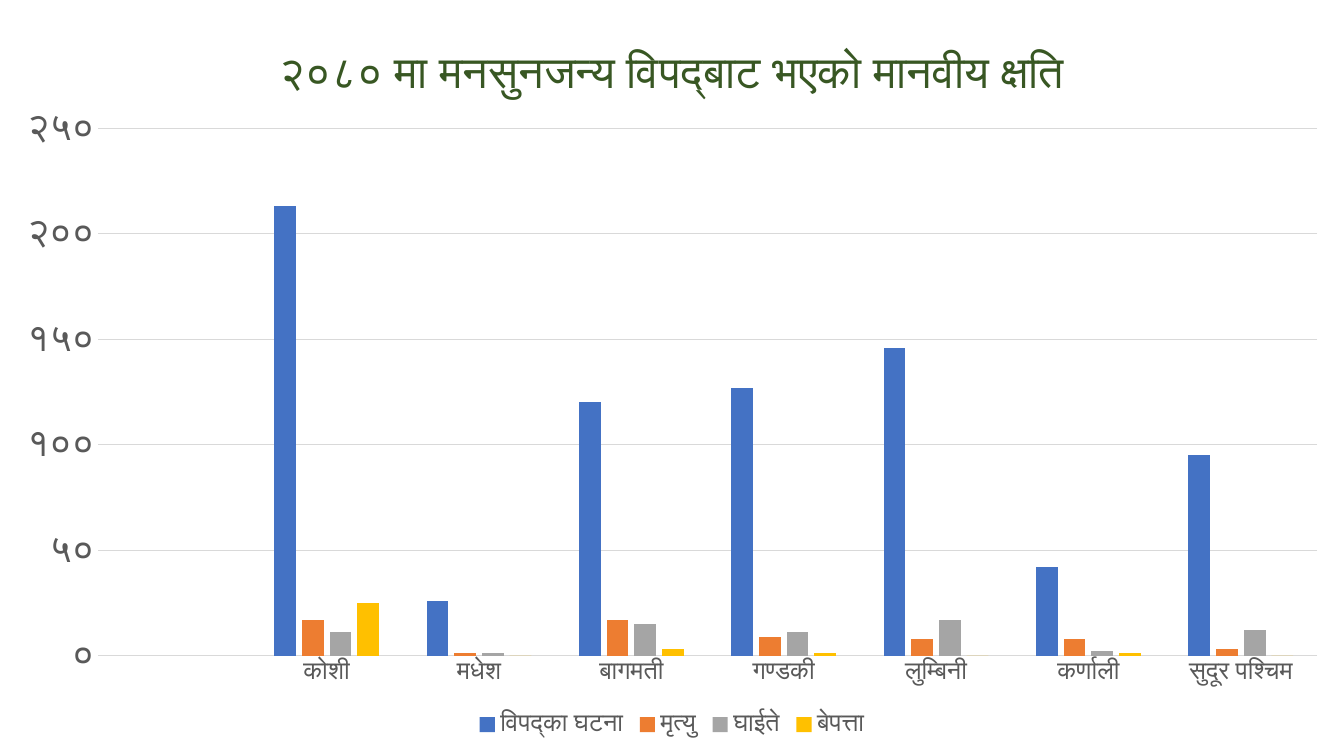
from pptx import Presentation
from pptx import util as u
from pptx.chart.data import CategoryChartData
from pptx.dml.color import RGBColor
from pptx.enum import chart as ch
from pptx.oxml import parse_xml
from pptx.oxml.ns import nsdecls

PX = 9525  # EMU in one px
FONT = "Calibri"
NUMBER_FORMAT = "[$-4000439]0"  # Devanagari digits

BLUE = RGBColor(0x44, 0x72, 0xC4)
ORANGE = RGBColor(0xED, 0x7D, 0x31)
GRAY = RGBColor(0xA5, 0xA5, 0xA5)
YELLOW = RGBColor(0xFF, 0xC0, 0x00)
GREEN = RGBColor(0x38, 0x57, 0x23)
LABEL = RGBColor(0x59, 0x59, 0x59)
GRID = RGBColor(0xD9, 0xD9, 0xD9)

TITLE = "२०८० मा मनसुनजन्य विपद्बाट भएको मानवीय क्षति"
PROVINCES = ["", "कोशी", "मधेश", "बागमती", "गण्डकी", "लुम्बिनी", "कर्णाली", "सुदूर पश्चिम"]
LOSSES = [
    ("विपद्का घटना", BLUE, [None, 213, 26, 120, 127, 146, 42, 95]),
    ("मृत्यु", ORANGE, [None, 17, 1, 17, 9, 8, 8, 3]),
    ("घाईते", GRAY, [None, 11, 1, 15, 11, 17, 2, 12]),
    ("बेपत्ता", YELLOW, [None, 25, 0, 3, 1, 0, 1, 0]),
]


def set_font(font, size, color=LABEL):
    font.name = FONT
    font.size = u.Pt(size)
    font.bold = False
    font.color.rgb = color


def write(tf, content, **style):
    tf.text = content
    set_font(tf.paragraphs[0].runs[0].font, **style)


def set_line(line):
    line.color.rgb = GRID
    line.width = u.Pt(0.75)


class ChartSlide:
    def __init__(self, prs):
        self.slide = prs.slides.add_slide(prs.slide_layouts[6])

    def columns(self, x, y, w, h, categories, series):
        data = CategoryChartData(number_format=NUMBER_FORMAT)
        data.categories = categories
        for name, _, values in series:
            data.add_series(name, values)
        frame = self.slide.shapes.add_chart(
            ch.XL_CHART_TYPE.COLUMN_CLUSTERED, *(v * PX for v in (x, y, w, h)), data)
        chart = frame.chart
        set_font(chart.font, 10, RGBColor(0, 0, 0))
        plot = chart.plots[0]
        plot.gap_width, plot.overlap = 219, -27
        plot.vary_by_categories = False
        for s, (_, color, _) in zip(plot.series, series):
            s.format.fill.solid()
            s.format.fill.fore_color.rgb = color
            s.invert_if_negative = False
        return chart

    def axes(self, chart, top, step):
        for axis, size in ((chart.category_axis, 18), (chart.value_axis, 28)):
            axis.major_tick_mark = axis.minor_tick_mark = ch.XL_TICK_MARK.NONE
            set_font(axis.tick_labels.font, size)
        set_line(chart.category_axis.format.line)
        values = chart.value_axis
        values.minimum_scale, values.maximum_scale = 0, top
        values.major_unit = step
        values.format.line.fill.background()
        set_line(values.major_gridlines.format.line)
        values.tick_labels.number_format = NUMBER_FORMAT
        values.tick_labels.number_format_is_linked = False

    def legend(self, chart, size):
        chart.has_legend = True
        chart.legend.position = ch.XL_LEGEND_POSITION.BOTTOM
        chart.legend.include_in_layout = False
        set_font(chart.legend.font, size)

    def plot_area(self, chart, **fractions):
        area = chart._chartSpace.chart.plotArea
        for old in area.xpath("c:layout"):
            area.remove(old)
        sizes = "".join(f'<c:{k} val="{v}"/>' for k, v in fractions.items())
        area.insert(0, parse_xml(
            f'<c:layout {nsdecls("c")}><c:manualLayout><c:layoutTarget val="inner"/>'
            f'<c:xMode val="edge"/><c:yMode val="edge"/>{sizes}'
            '</c:manualLayout></c:layout>'))


def main():
    prs = Presentation()
    prs.slide_width, prs.slide_height = 1280 * PX, 720 * PX
    s = ChartSlide(prs)

    # Human losses by province
    chart = s.columns(0, 19, 1280, 688, PROVINCES, LOSSES)
    chart.has_title = True
    write(chart.chart_title.text_frame, TITLE, size=32, color=GREEN)
    chart.chart_title.include_in_layout = False

    # Axes, legend and plot position
    s.axes(chart, top=250, step=50)
    s.legend(chart, 18)
    s.plot_area(chart, x=0.073, y=0.15, w=0.907, h=0.73)

    prs.save("out.pptx")


if __name__ == "__main__":
    main()
